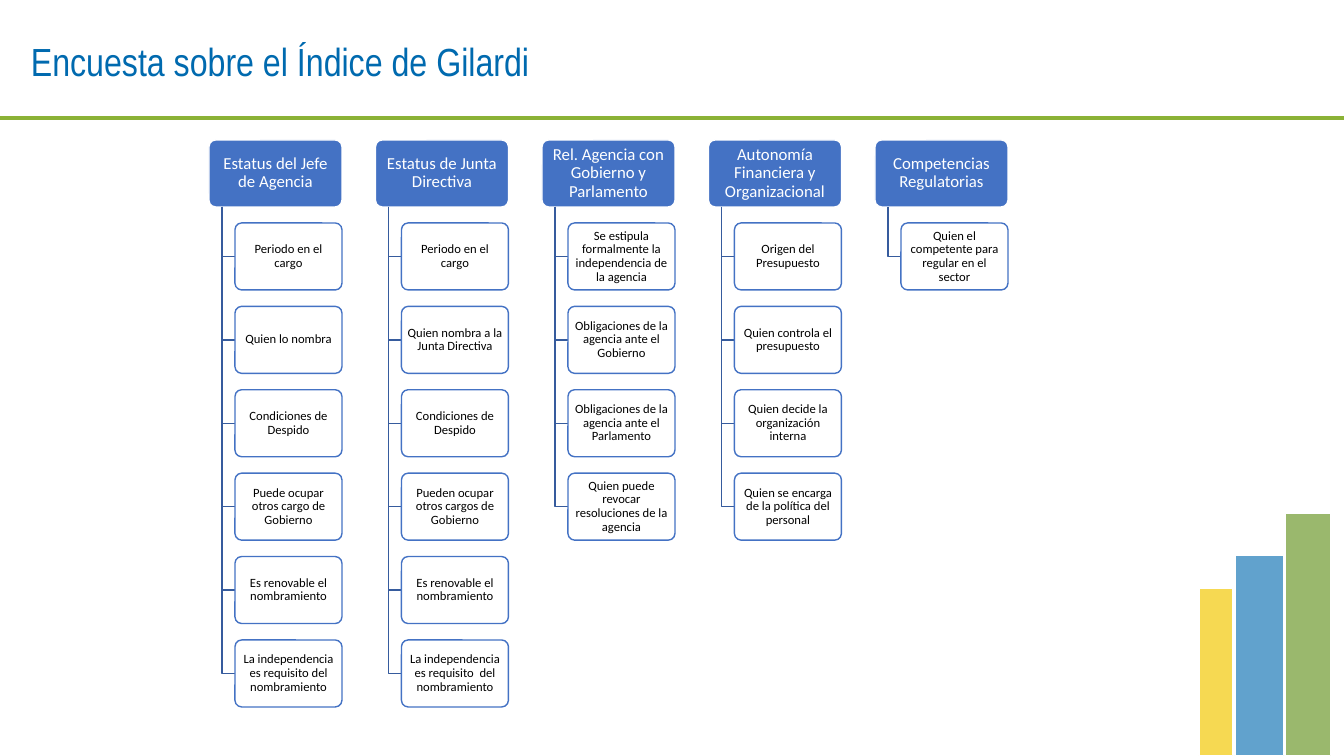
from lxml.etree import SubElement
from pptx import Presentation
from pptx.dml.color import RGBColor
from pptx.enum.shapes import MSO_CONNECTOR, MSO_SHAPE
from pptx.enum.text import MSO_ANCHOR, MSO_AUTO_SIZE, PP_ALIGN
from pptx.oxml.ns import qn
from pptx.util import Pt

TITLE = "Encuesta sobre el Índice de Gilardi"
COLUMNS = [
    ("Estatus del Jefe de Agencia", [
        "Periodo en el cargo",
        "Quien lo nombra",
        "Condiciones de Despido",
        "Puede ocupar otros cargo de Gobierno",
        "Es renovable el nombramiento",
        "La independencia es requisito del nombramiento",
    ]),
    ("Estatus de Junta Directiva", [
        "Periodo en el cargo",
        "Quien nombra a la Junta Directiva",
        "Condiciones de Despido",
        "Pueden ocupar otros cargos de Gobierno",
        "Es renovable el nombramiento",
        "La independencia es requisito  del nombramiento",
    ]),
    ("Rel. Agencia con Gobierno y Parlamento", [
        "Se estipula formalmente la independencia de la agencia",
        "Obligaciones de la agencia ante el Gobierno",
        "Obligaciones de la agencia ante el Parlamento",
        "Quien puede revocar resoluciones de la agencia",
    ]),
    ("Autonomía Financiera y Organizacional", [
        "Origen del Presupuesto",
        "Quien controla el presupuesto",
        "Quien decide la organización interna",
        "Quien se encarga de la política del personal",
    ]),
    ("Competencias Regulatorias", [
        "Quien el competente para regular en el sector",
    ]),
]
# left, top, width, height, colour, opacity in percent
BARS = [
    (1285, 513, 46, 243, "61911B", 64),
    (1235, 555, 49, 201, "006AAF", 62),
    (1199, 588, 34, 168, "F3C700", 68),
]

EMU_PER_PX = 914400 / 100.8
SLIDE_WIDTH, SLIDE_HEIGHT = 1344, 756
RULE_Y = 118
FIRST_LEFT, LAST_LEFT = 209, 875
HEADER_TOP, HEADER_WIDTH, HEADER_HEIGHT = 140, 133, 67
FIRST_TOP, LAST_TOP, MAX_ITEMS = 223, 640, 6
ITEM_INDENT, ITEM_WIDTH, ITEM_HEIGHT = 26, 107, 67
TRUNK_INDENT = 13
COLUMN_PITCH = (LAST_LEFT - FIRST_LEFT) / (len(COLUMNS) - 1)
ROW_PITCH = (LAST_TOP - FIRST_TOP) / (MAX_ITEMS - 1)


def px(length):
    return round(length * EMU_PER_PX)


def rgb(colour):
    return RGBColor.from_string(colour)


def set_line(shape, colour, points):
    shape.line.color.rgb = rgb(colour)
    shape.line.width = Pt(points)


def add_block(kind, left, top, width, height, fill, line, points, opacity=100):
    shape = slide.shapes.add_shape(kind, px(left), px(top), px(width), px(height))
    shape.shadow.inherit = False
    shape.fill.solid()
    shape.fill.fore_color.rgb = rgb(fill)
    set_line(shape, line, points)
    if opacity < 100:
        colour = shape.element.spPr.find(qn("a:solidFill")).find(qn("a:srgbClr"))
        SubElement(colour, qn("a:alpha"), val=str(opacity * 1000))
    return shape


def add_run(paragraph, text, font, size, colour):
    run = paragraph.add_run()
    run.text = text
    run.font.name = font
    run.font.size = Pt(size)
    run.font.color.rgb = rgb(colour)


def add_card(text, left, top, width, height, fill, line, colour, size, margins, opacity=100):
    """Rounded box with centred text; margins are (side, top and bottom)."""
    card = add_block(MSO_SHAPE.ROUNDED_RECTANGLE, left, top, width, height,
                     fill, line, 1, opacity)
    card.adjustments[0] = 0.1
    frame = card.text_frame
    frame.word_wrap = True
    frame.vertical_anchor = MSO_ANCHOR.MIDDLE
    frame.margin_left = frame.margin_right = px(margins[0])
    frame.margin_top = frame.margin_bottom = px(margins[1])
    paragraph = frame.paragraphs[0]
    paragraph.alignment = PP_ALIGN.CENTER
    paragraph.line_spacing = 0.9
    add_run(paragraph, text, "Calibri", size, colour)


def add_elbow(trunk_x, top, end_x, end_y):
    builder = slide.shapes.build_freeform(px(trunk_x), px(top))
    builder.add_line_segments([(px(trunk_x), px(end_y)), (px(end_x), px(end_y))],
                              close=False)
    elbow = builder.convert_to_shape()
    elbow.shadow.inherit = False
    elbow.fill.background()
    set_line(elbow, "365B9D", 1)


presentation = Presentation()
presentation.slide_width = px(SLIDE_WIDTH)
presentation.slide_height = px(SLIDE_HEIGHT)
slide = presentation.slides.add_slide(presentation.slide_layouts[6])

rule = slide.shapes.add_connector(MSO_CONNECTOR.STRAIGHT, 0, px(RULE_Y),
                                  px(SLIDE_WIDTH), px(RULE_Y))
set_line(rule, "8BB236", 2.25)
SubElement(rule.element.spPr, qn("a:effectLst"))

for left, top, width, height, colour, opacity in BARS:
    add_block(MSO_SHAPE.RECTANGLE, left, top, width, height, colour, "FFFFFF", 0.75, opacity)

title = slide.shapes.add_textbox(px(21), px(32), px(532), px(57))
title.text_frame.word_wrap = False
title.text_frame.auto_size = MSO_AUTO_SIZE.SHAPE_TO_FIT_TEXT
add_run(title.text_frame.paragraphs[0], TITLE, "Arial Narrow", 28, "006AAF")

for column, (header, items) in enumerate(COLUMNS):
    left = FIRST_LEFT + column * COLUMN_PITCH
    add_card(header, left, HEADER_TOP, HEADER_WIDTH, HEADER_HEIGHT,
             "4472C4", "FFFFFF", "FFFFFF", 12, (5, 4))
    for row, item in enumerate(items):
        top = FIRST_TOP + row * ROW_PITCH
        item_left = left + ITEM_INDENT
        add_elbow(left + TRUNK_INDENT, HEADER_TOP + HEADER_HEIGHT,
                  item_left, top + ITEM_HEIGHT / 2)
        add_card(item, item_left, top, ITEM_WIDTH, ITEM_HEIGHT,
                 "FFFFFF", "4472C4", "000000", 9, (4, 3), opacity=90)

presentation.save("out.pptx")
